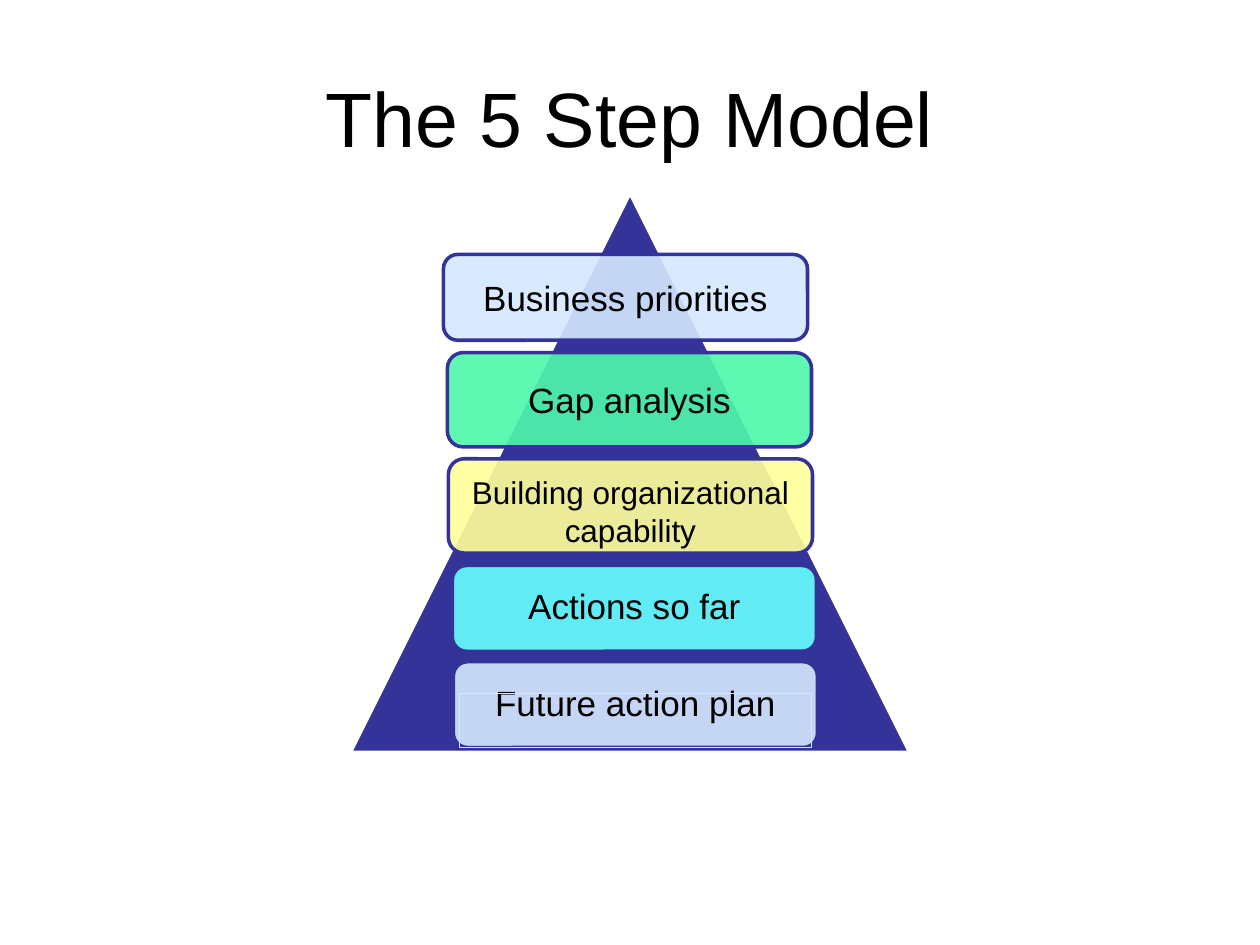
from dataclasses import dataclass

from lxml.etree import SubElement
from pptx import Presentation
from pptx.dml.color import RGBColor
from pptx.enum.shapes import MSO_SHAPE as Shape
from pptx.enum.text import MSO_ANCHOR as Anchor, PP_ALIGN as Align
from pptx.oxml.ns import qn
from pptx.util import Cm, Pt


@dataclass(frozen=True)
class Theme:
    font: str = "Arial"
    text: str = "000000"
    navy: str = "333399"
    white: str = "FFFFFF"
    pale_blue: str = "D5E8FF"
    green: str = "4EF8AB"
    yellow: str = "FFFF99"
    cyan: str = "66FFFF"
    title_size: float = 44
    step_size: float = 20
    small_size: float = 18
    outline: float = 2
    hairline: float = 0.75
    step_opacity: int = 90


class StepSlide:
    def __init__(self, slide, theme):
        self.slide = slide
        self.theme = theme

    def label(self, shape, wording, size, inset=0.2, drop=0):
        """Centre the wording in the shape, lowered by drop centimetres."""
        frame = shape.text_frame
        layout = {
            "word_wrap": True,
            "vertical_anchor": Anchor.MIDDLE,
            "margin_left": Cm(inset),
            "margin_right": Cm(inset),
            "margin_top": Cm(inset + 2 * drop),
            "margin_bottom": Cm(inset),
        }
        for key, value in layout.items():
            setattr(frame, key, value)
        paragraph = frame.paragraphs[0]
        paragraph.alignment = Align.CENTER
        run = paragraph.add_run()
        run.text = wording
        for key, value in {"name": self.theme.font, "size": Pt(size)}.items():
            setattr(run.font, key, value)
        run.font.color.rgb = RGBColor.from_string(self.theme.text)

    def title(self, wording, box):
        heading = self.slide.shapes.add_textbox(*map(Cm, box))
        self.label(heading, wording, self.theme.title_size)

    def block(self, preset, box, fill, line, weight, opacity=100):
        shape = self.slide.shapes.add_shape(preset, *map(Cm, box))
        shape.shadow.inherit = False
        if fill:
            shape.fill.solid()
            shape.fill.fore_color.rgb = RGBColor.from_string(fill)
        else:
            shape.fill.background()
        if opacity < 100:
            color = next(shape.element.iter(qn("a:srgbClr")))
            SubElement(color, qn("a:alpha"), val=str(opacity * 1000))
        shape.line.color.rgb = RGBColor.from_string(line)
        shape.line.width = Pt(weight)
        return shape

    def step(self, wording, box, fill, size, drop=0):
        theme = self.theme
        card = self.block(Shape.ROUNDED_RECTANGLE, box, fill, theme.navy,
                          theme.outline, theme.step_opacity)
        self.label(card, wording, size, drop=drop)


def main():
    theme = Theme()
    deck = Presentation()
    deck.slide_width, deck.slide_height = Cm(25.4), Cm(19.05)
    model = StepSlide(deck.slides.add_slide(deck.slide_layouts[6]), theme)

    model.title("The 5 Step Model", (1.27, 0.76, 22.86, 3.18))
    model.block(Shape.ISOSCELES_TRIANGLE, (7.06, 3.89, 11.28, 11.28),
                theme.navy, theme.white, theme.outline)

    step_width = 7.34
    low, tall = 1.73, 1.9
    steps = [
        ("Business priorities", 8.94, 5.13, low, theme.pale_blue, theme.step_size, 0),
        ("Gap analysis", 9.02, 7.11, tall, theme.green, theme.step_size, 0),
        ("Building organizational capability", 9.04, 9.25, tall, theme.yellow,
         theme.small_size, 0.1),
        ("Actions so far", 9.12, 11.4, low, theme.cyan, theme.step_size, -0.05),
        ("Future action plan", 9.14, 13.34, low, theme.pale_blue, theme.step_size, -0.05),
    ]
    for wording, left, top, height, fill, size, drop in steps:
        model.step(wording, (left, top, step_width, height), fill, size, drop)

    model.block(Shape.RECTANGLE, (9.26, 13.98, 7.1, 1.09), None,
                theme.pale_blue, theme.hairline)
    deck.save("out.pptx")


if __name__ == "__main__":
    main()
